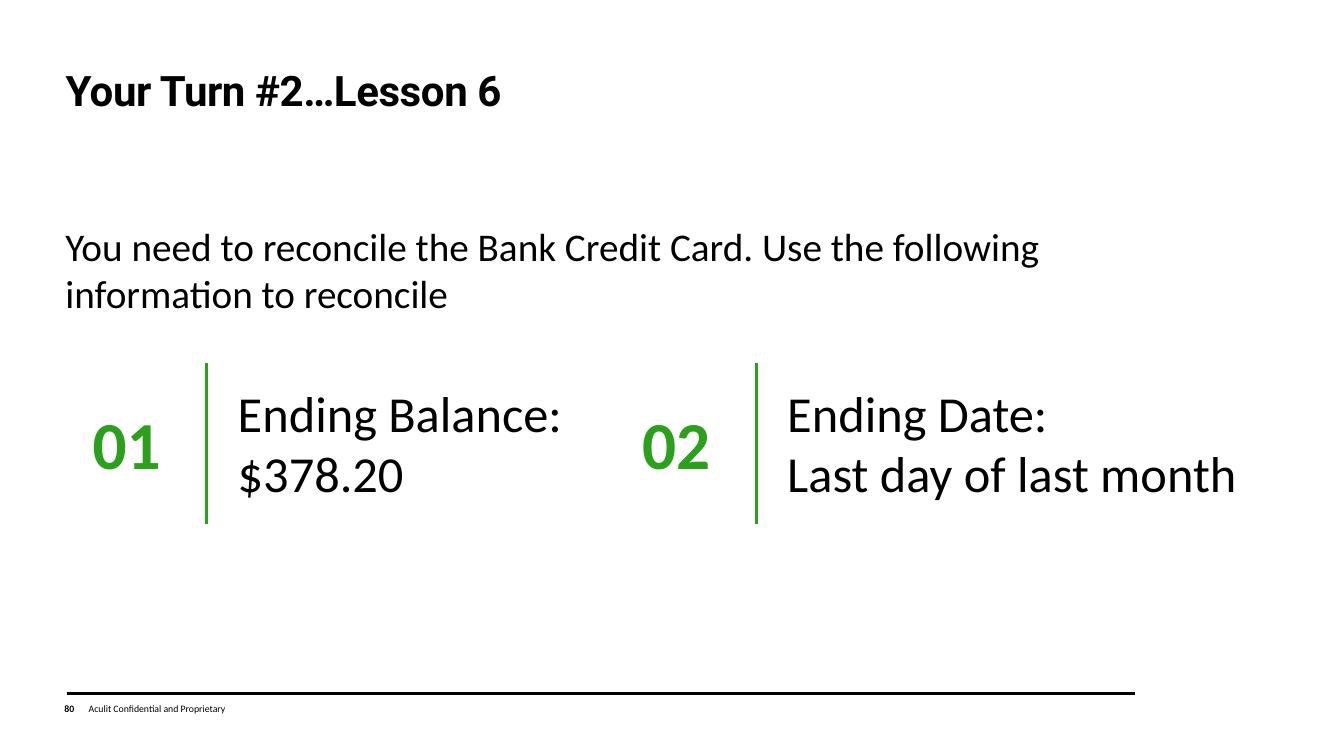
from lxml import etree
from pptx import Presentation
from pptx.dml.color import RGBColor
from pptx.enum.shapes import MSO_CONNECTOR
from pptx.enum.text import MSO_ANCHOR, MSO_AUTO_SIZE, PP_ALIGN
from pptx.oxml.ns import qn
from pptx.util import Inches, Pt

BLACK = "000000"
GREEN = "2CA01C"


def color(hex_value):
    return RGBColor.from_string(hex_value)


def add_run(paragraph, text, size, hex_value=BLACK, bold=False, font_name="Calibri"):
    run = paragraph.add_run()
    run.text = text
    run.font.name = font_name
    run.font.size = Pt(size)
    run.font.bold = bold
    run.font.color.rgb = color(hex_value)
    return run


def add_text(shapes, box, lines, size, hex_value=BLACK, bold=False):
    text_box = shapes.add_textbox(*(Inches(value) for value in box))
    frame = text_box.text_frame
    frame.word_wrap = True
    frame.auto_size = MSO_AUTO_SIZE.SHAPE_TO_FIT_TEXT
    for index, line in enumerate(lines):
        paragraph = frame.paragraphs[0] if index == 0 else frame.add_paragraph()
        add_run(paragraph, line, size, hex_value, bold)
    return frame


def add_line(shapes, start, end, hex_value, width):
    points = (Inches(value) for value in (*start, *end))
    line = shapes.add_connector(MSO_CONNECTOR.STRAIGHT, *points)
    line.line.color.rgb = color(hex_value)
    line.line.width = Pt(width)
    etree.SubElement(line._element.spPr, qn("a:effectLst"))


def add_title(slide, box, text):
    title = slide.shapes.title
    title.left, title.top, title.width, title.height = (Inches(value) for value in box)
    frame = title.text_frame
    frame.word_wrap = True
    frame.auto_size = MSO_AUTO_SIZE.NONE
    frame.vertical_anchor = MSO_ANCHOR.BOTTOM
    paragraph = frame.paragraphs[0]
    paragraph.alignment = PP_ALIGN.LEFT
    paragraph.line_spacing = 0.95
    run = add_run(paragraph, text, 30, bold=True, font_name="Roboto")
    # Slightly tightened letter spacing
    run.font._element.set("spc", "-30")


def add_numbered_fact(slide, left, top, number, lines, text_width):
    shapes = slide.shapes.add_group_shape().shapes
    add_text(shapes, (left, top + 0.34, 1.13, 0.91), [number], 48, GREEN, bold=True)
    add_line(shapes, (left + 1.23, top), (left + 1.23, top + 1.6), GREEN, 2)
    add_text(shapes, (left + 1.44, top + 0.14, text_width, 1.31), lines, 36)


def add_footer(slide, left, top, width, page, notice):
    # Rule above the footer
    add_line(slide.shapes, (left, top), (left + width, top), BLACK, 1.5)

    # Page number and notice
    text_top = top + 0.05
    number = add_text(slide.shapes, (left - 0.12, text_top, 0.39, 0.2), [page], 7, bold=True)
    label = add_text(slide.shapes, (left + 0.22, text_top, 2.67, 0.2), [notice], 7)
    label.margin_left = label.margin_right = 0
    for frame in (number, label):
        frame.auto_size = MSO_AUTO_SIZE.NONE
        frame.vertical_anchor = MSO_ANCHOR.MIDDLE


def build_lesson_slide(presentation):
    slide = presentation.slides.add_slide(presentation.slide_layouts[5])
    slide.background.fill.solid()
    slide.background.fill.fore_color.rgb = color("FFFFFF")

    add_footer(slide, 0.66, 6.88, 10.6, "80", "Aculit Confidential and Proprietary")
    add_title(slide, (0.55, 0.6, 12.15, 0.6), "Your Turn #2…Lesson 6")

    # Task
    task = (
        "You need to reconcile the Bank Credit Card. "
        "Use the following information to reconcile"
    )
    add_text(slide.shapes, (0.55, 2.16, 11.42, 1.04), [task], 28)

    # Facts needed for the task, side by side
    facts = [
        (["Ending Balance:", "$378.20"], 3.54),
        (["Ending Date:", "Last day of last month"], 4.8),
    ]
    for index, (lines, text_width) in enumerate(facts):
        left = 0.82 + index * 5.45
        add_numbered_fact(slide, left, 3.6, f"{index + 1:02d}", lines, text_width)


def main():
    presentation = Presentation()
    presentation.slide_width = Inches(13.33)
    presentation.slide_height = Inches(7.5)
    build_lesson_slide(presentation)
    presentation.save("out.pptx")


if __name__ == "__main__":
    main()
